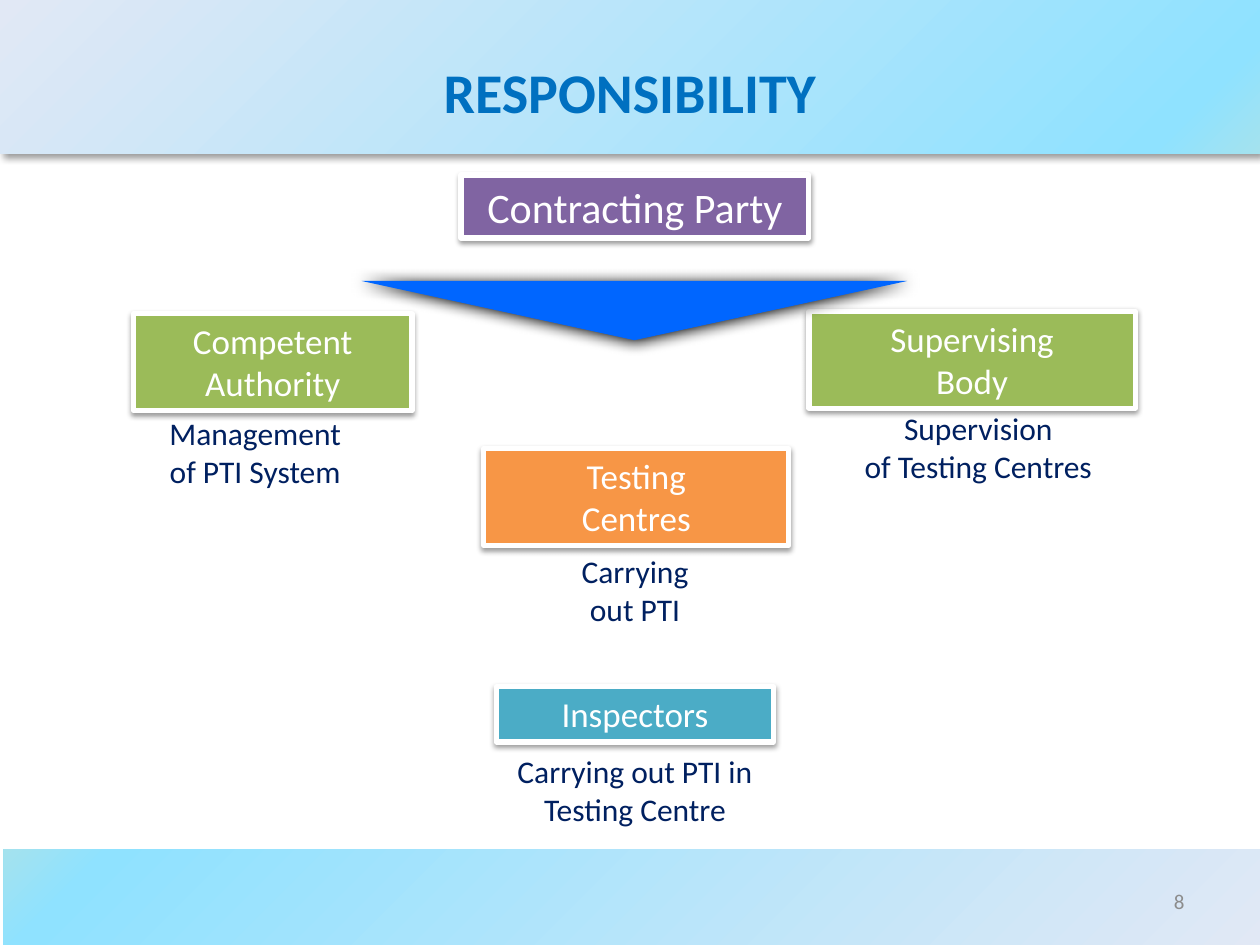
import pptx
import pptx.util
from pptx.dml.color import RGBColor
from pptx.enum.shapes import MSO_SHAPE
from pptx.enum.text import MSO_ANCHOR, PP_ALIGN
from pptx.oxml import parse_xml
from pptx.oxml.ns import nsdecls, qn

SCALE = 9144  # EMU per px, 100 px to the inch
FONT = "Calibri"
BAND_STOPS = [(0, "A4E2EE"), (8, "8FE2FF"), (100, "E1E8F5")]
BOX_SHADOW = ("000000", 38, 3.1, 1.6, 90)


def px(*lengths):
    return [pptx.util.Emu(length * SCALE) for length in lengths]


def color(hex_string):
    return RGBColor.from_string(hex_string)


def write_text(shape, text, size, hex_color, bold=False, align=PP_ALIGN.CENTER,
               anchor=MSO_ANCHOR.TOP):
    frame = shape.text_frame
    frame.word_wrap = True
    frame.vertical_anchor = anchor
    frame.text = text
    for paragraph in frame.paragraphs:
        paragraph.alignment = align
        font = paragraph.runs[0].font
        font.name, font.size, font.bold = FONT, pptx.util.Pt(size), bold
        font.color.rgb = color(hex_color)


def add_text(slide, box, text, **text_format):
    write_text(slide.shapes.add_textbox(*px(*box)), text, **text_format)


def add_shadow(shape, hex_color, opacity, blur, distance, angle):
    effects = shape._element.spPr.find(qn("a:effectLst"))
    effects.append(parse_xml(
        f'<a:outerShdw {nsdecls("a")} blurRad="{round(blur * 12700)}" '
        f'dist="{round(distance * 12700)}" dir="{angle * 60000}" rotWithShape="0">'
        f'<a:srgbClr val="{hex_color}"><a:alpha val="{opacity * 1000}"/></a:srgbClr>'
        '</a:outerShdw>'))


def add_shape(slide, box, kind=MSO_SHAPE.RECTANGLE, fill=None, line=None, shadow=None):
    shape = slide.shapes.add_shape(kind, *px(*box))
    shape.shadow.inherit = False
    if fill:
        shape.fill.solid()
        shape.fill.fore_color.rgb = color(fill)
    else:
        shape.fill.background()
    if line:
        shape.line.color.rgb = color(line)
        shape.line.width = pptx.util.Pt(3)
    else:
        shape.line.fill.background()
    if shadow:
        add_shadow(shape, *shadow)
    return shape


def add_band(slide, box, focus, shadow=None):
    """Band with a radial gradient that starts in the corner named by focus."""
    shape = add_shape(slide, box, shadow=shadow)
    stops = "".join(f'<a:gs pos="{position * 1000}"><a:srgbClr val="{hex_color}"/></a:gs>'
                    for position, hex_color in BAND_STOPS)
    corner = " ".join(f'{side}="100000"' for side in focus)
    properties = shape._element.spPr
    properties.replace(properties.find(qn("a:noFill")), parse_xml(
        f'<a:gradFill {nsdecls("a")} rotWithShape="1"><a:gsLst>{stops}</a:gsLst>'
        f'<a:path path="circle"><a:fillToRect {corner}/></a:path></a:gradFill>'))


def add_header(slide, box):
    left, top, width, height = box
    add_band(slide, box, focus="lt", shadow=("000000", 40, 4, 3, 45))
    title = slide.shapes.title
    title.left, title.top, title.width, title.height = px(left + 50, top + 30, width - 100, 85)
    write_text(title, "RESPONSIBILITY", size=32, hex_color="0070C0", bold=True,
               anchor=MSO_ANCHOR.MIDDLE)
    # Bring the title in front of the band
    slide.shapes._spTree.append(title._element)


def add_role(slide, box, name, fill, size=20, duty=None, duty_box=None):
    """Named box; duty_box is left, top, width of its caption, relative to the box."""
    shape = add_shape(slide, box, fill=fill, line="FFFFFF", shadow=BOX_SHADOW)
    write_text(shape, name, size=size, hex_color="FFFFFF")
    if duty:
        left, top, width = duty_box
        add_text(slide, (box[0] + left, box[1] + top, width, 71), duty,
                 size=18, hex_color="002060")


def add_footer(slide, box, number):
    left, top, width, height = box
    add_band(slide, box, focus="rb")
    add_text(slide, (left + 714, top + 21, 233, 40), number, size=12, hex_color="8C8C8C",
             align=PP_ALIGN.RIGHT, anchor=MSO_ANCHOR.MIDDLE)


def main():
    presentation = pptx.Presentation()
    presentation.slide_width, presentation.slide_height = px(1000, 750)
    slide = presentation.slides.add_slide(presentation.slide_layouts[5])

    add_header(slide, (0, 0, 1000, 122))

    # Roles and their duties
    add_role(slide, (366, 139, 276, 50), "Contracting Party", "8064A2", size=24)
    add_role(slide, (106, 249, 221, 77), "Competent\nAuthority", "9BBB59",
             duty="Management\nof PTI System", duty_box=(-6, 75, 205))
    add_role(slide, (642, 247, 259, 77), "Supervising\nBody", "9BBB59",
             duty="Supervision\nof Testing Centres", duty_box=(14, 73, 241))
    add_role(slide, (384, 356, 242, 77), "Testing\nCentres", "F79646",
             duty="Carrying\nout PTI", duty_box=(10, 77, 220))
    add_role(slide, (394, 545, 220, 44), "Inspectors", "4BACC6",
             duty="Carrying out PTI in Testing Centre", duty_box=(0, 47, 220))

    add_footer(slide, (3, 674, 1000, 76), "8")

    # Downward pointer below the contracting party
    pointer = add_shape(slide, (287, 223, 433, 47), MSO_SHAPE.ISOSCELES_TRIANGLE,
                        fill="0066FF", shadow=("000000", 100, 8.5, 1, 90))
    pointer.rotation = 180

    presentation.save("out.pptx")


if __name__ == "__main__":
    main()
